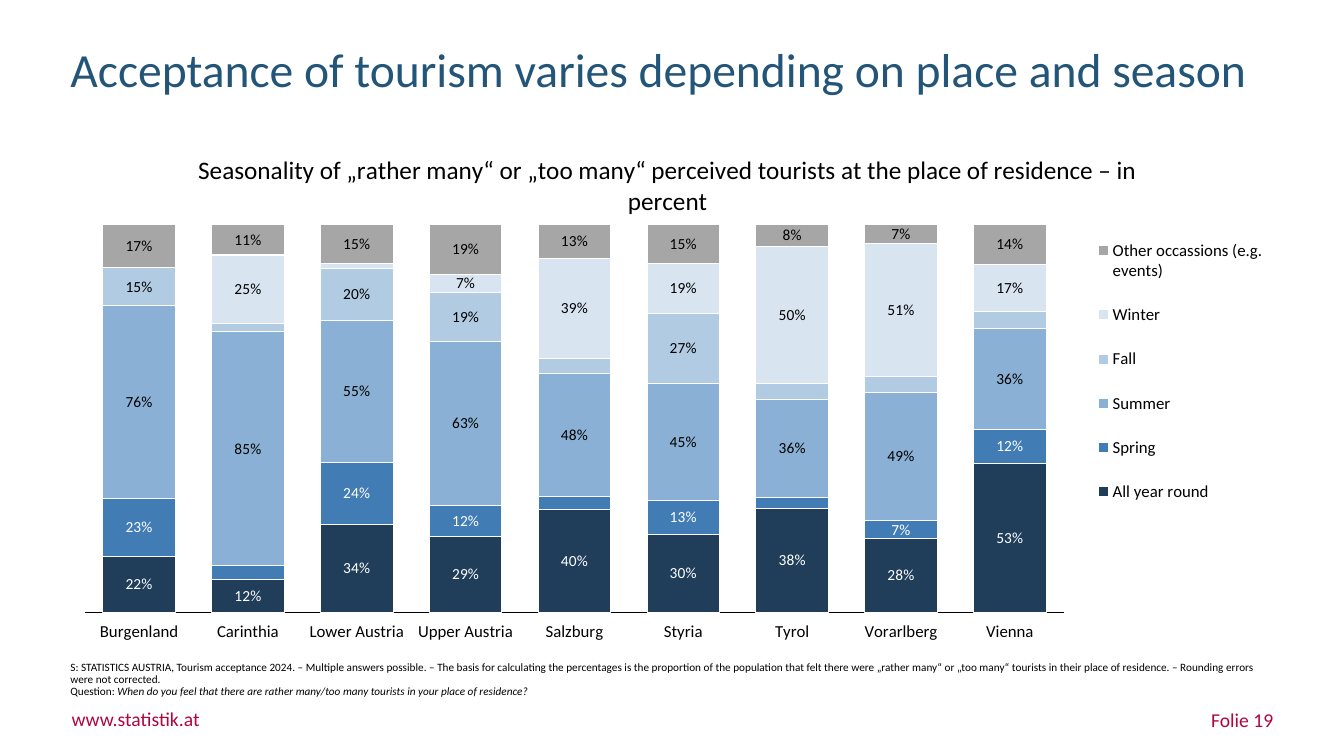
from lxml import etree
from pptx import Presentation
from pptx.chart.data import CategoryChartData
from pptx.dml.color import RGBColor
from pptx.enum.chart import XL_CHART_TYPE, XL_LEGEND_POSITION, XL_TICK_LABEL_POSITION, XL_TICK_MARK
from pptx.enum.text import MSO_ANCHOR, PP_ALIGN
from pptx.oxml import parse_xml
from pptx.oxml.ns import nsdecls
from pptx.util import Emu, Pt

PX = 9144  # 100 px to the inch

BLACK = RGBColor(0x00, 0x00, 0x00)
WHITE = RGBColor(0xFF, 0xFF, 0xFF)
TITLE_BLUE = RGBColor(0x23, 0x55, 0x78)
FOOTER_RED = RGBColor(0xB0, 0x06, 0x3D)
NAVY = RGBColor(0x20, 0x3E, 0x5A)
STRONG_BLUE = RGBColor(0x41, 0x7D, 0xB4)
MID_BLUE = RGBColor(0x8A, 0xB1, 0xD5)
LIGHT_BLUE = RGBColor(0xB1, 0xCB, 0xE3)
PALE_BLUE = RGBColor(0xD8, 0xE5, 0xF1)
GREY = RGBColor(0xA6, 0xA6, 0xA6)

SMALLEST_LABELLED = 0.07

PROVINCES = ["Burgenland", "Carinthia", "Lower Austria", "Upper Austria", "Salzburg",
             "Styria", "Tyrol", "Vorarlberg", "Vienna"]

# name, fill, label colour, values
SEASONS = [
    ("All year round", NAVY, WHITE, [0.22, 0.12, 0.34, 0.29, 0.4, 0.3, 0.38, 0.28, 0.53]),
    ("Spring", STRONG_BLUE, WHITE, [0.23, 0.05, 0.24, 0.12, 0.05, 0.13, 0.04, 0.07, 0.12]),
    ("Summer", MID_BLUE, BLACK, [0.76, 0.85, 0.55, 0.63, 0.48, 0.45, 0.36, 0.49, 0.36]),
    ("Fall", LIGHT_BLUE, BLACK, [0.15, 0.03, 0.2, 0.19, 0.06, 0.27, 0.06, 0.06, 0.06]),
    ("Winter", PALE_BLUE, BLACK, [0, 0.25, 0.02, 0.07, 0.39, 0.19, 0.5, 0.51, 0.17]),
    ("Other occassions (e.g. events)", GREY, BLACK,
     [0.17, 0.11, 0.15, 0.19, 0.13, 0.15, 0.08, 0.07, 0.14]),
]

CHART_TITLE = ("Seasonality of „rather many“ or „too many“ perceived tourists "
               "at the place of residence – in percent")
SOURCE_NOTE = ("S: STATISTICS AUSTRIA, Tourism acceptance 2024. – Multiple answers possible. – "
               "The basis for calculating the percentages is the proportion of the population "
               "that felt there were „rather many“ or „too many“ tourists in their place of "
               "residence. – Rounding errors were not corrected.")
QUESTION = ("When do you feel that there are rather many/too many tourists "
            "in your place of residence?")


def set_font(font, size, color, italic=None):
    font.name = "Calibri"
    font.size = Pt(size)
    font.color.rgb = color
    font.bold = False
    font.italic = italic


def add_span(para, text, size, color=BLACK, italic=None):
    span = para.add_run()
    span.text = text
    set_font(span.font, size, color, italic)


def place(element, inner=False, **fractions):
    """Give a chart part a fixed position as fractions of the chart area."""
    for old in element.findall("{*}layout"):
        element.remove(old)
    layout = parse_xml(f"<c:layout {nsdecls('c')}><c:manualLayout/></c:layout>")
    settings = {"layoutTarget": "inner"} if inner else {}
    settings.update(xMode="edge", yMode="edge", **fractions)
    namespace = etree.QName(layout).namespace
    for name, value in settings.items():
        etree.SubElement(layout[0], f"{{{namespace}}}{name}").set("val", str(value))
    before = [child for child in element
              if etree.QName(child).localname in ("tx", "legendPos", "legendEntry")]
    element.insert(len(before), layout)


class SlideBuilder:
    def __init__(self, deck):
        self.page = deck.slides.add_slide(deck.slide_layouts[6])

    def text(self, left, top, width, height, paragraphs, size, color, *, margins=(0, 0),
             anchor=MSO_ANCHOR.TOP, align=PP_ALIGN.LEFT, spacing=None, wrap=True):
        """Add a text box; each paragraph is a list of (text, italic) spans."""
        box = self.page.shapes.add_textbox(*(Emu(n * PX) for n in (left, top, width, height)))
        frame = box.text_frame
        frame.word_wrap = wrap
        frame.vertical_anchor = anchor
        frame.margin_left = frame.margin_right = Emu(margins[0] * PX)
        frame.margin_top = frame.margin_bottom = Emu(margins[1] * PX)
        for index, spans in enumerate(paragraphs):
            para = frame.add_paragraph() if index else frame.paragraphs[0]
            para.alignment = align
            if spacing:
                para.line_spacing = spacing
            for text, italic in spans:
                add_span(para, text, size, color, italic)

    def season_chart(self, left, top, width, height):
        data = CategoryChartData(number_format="0%")
        data.categories = PROVINCES
        for name, _, _, values in SEASONS:
            data.add_series(name, values)
        chart = self.page.shapes.add_chart(
            XL_CHART_TYPE.COLUMN_STACKED_100,
            *(Emu(n * PX) for n in (left, top, width, height)), data).chart
        set_font(chart.font, 10, BLACK)

        chart.has_title = True
        add_span(chart.chart_title.text_frame.paragraphs[0], CHART_TITLE, 18)
        chart.chart_title.include_in_layout = False
        place(chart.chart_title._element, x=0.11, y=0.05)

        chart.has_legend = True
        chart.legend.position = XL_LEGEND_POSITION.RIGHT
        chart.legend.include_in_layout = False
        set_font(chart.legend.font, 12, BLACK)
        place(chart.legend._element, x=0.85, y=0.18, w=0.15, h=0.59)
        place(chart._chartSpace.chart.plotArea, inner=True, x=0.02, y=0.196, w=0.809, h=0.738)

        provinces = chart.category_axis
        provinces.major_tick_mark = XL_TICK_MARK.NONE
        provinces.tick_label_position = XL_TICK_LABEL_POSITION.LOW
        provinces.format.line.color.rgb = BLACK
        provinces.format.line.width = Pt(1)
        set_font(provinces.tick_labels.font, 12, BLACK)
        chart.value_axis.has_major_gridlines = False
        chart.value_axis.visible = False

        plot = chart.plots[0]
        plot.gap_width = 50
        plot.overlap = 100
        for series, (_, fill, label_color, values) in zip(plot.series, SEASONS):
            self.style_season(series, fill, label_color, values)

    def style_season(self, series, fill, label_color, values):
        series.format.fill.solid()
        series.format.fill.fore_color.rgb = fill
        series.format.line.color.rgb = WHITE
        series.format.line.width = Pt(0.75)
        labels = series.data_labels
        labels.show_value = True
        labels.number_format = "0%"
        labels.number_format_is_linked = False
        set_font(labels.font, 11, label_color)
        hidden = [i for i, value in enumerate(values) if value < SMALLEST_LABELLED]
        for position, index in enumerate(hidden):
            labels._element.insert(position, parse_xml(
                f'<c:dLbl {nsdecls("c")}><c:idx val="{index}"/><c:delete val="1"/></c:dLbl>'))


def main():
    deck = Presentation()
    deck.slide_width = Emu(1333 * PX)
    deck.slide_height = Emu(750 * PX)
    slide = SlideBuilder(deck)
    slide.text(71, 701, 129, 24, [[("www.statistik.at", None)]], 14, FOOTER_RED, wrap=False)
    slide.text(963, 702, 300, 24, [[("Folie 19", None)]], 14, FOOTER_RED, align=PP_ALIGN.RIGHT)
    slide.text(60, 650, 1201, 47, [[(SOURCE_NOTE, None)], [("Question: ", None), (QUESTION, True)]],
               8, BLACK, margins=(10, 5), anchor=MSO_ANCHOR.BOTTOM, spacing=0.9)
    slide.season_chart(60, 121, 1201, 521)
    slide.text(60, 41, 1235, 62,
               [[("Acceptance of tourism varies depending on place and season", None)]],
               34, TITLE_BLUE, margins=(10, 5), spacing=0.9)
    deck.save("out.pptx")


if __name__ == "__main__":
    main()
